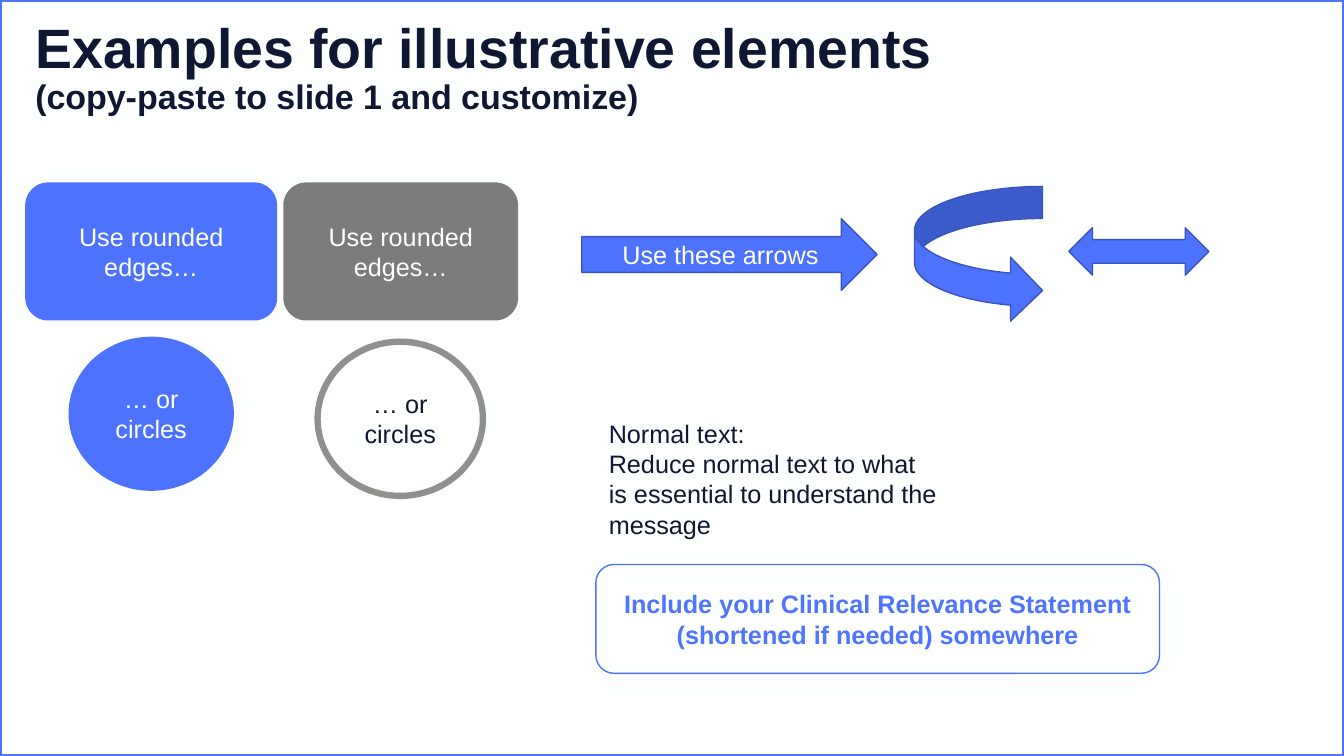
import dataclasses
import typing

import pptx
import pptx.dml.color
import pptx.enum.shapes
import pptx.enum.text
import pptx.util

SCALE = 9144
KIND = pptx.enum.shapes.MSO_SHAPE
ALIGN = pptx.enum.text.PP_ALIGN
ANCHOR = pptx.enum.text.MSO_ANCHOR
BLUE, EDGE, GRAY, RING = "4D73FE", "3955BC", "7C7C7C", "8E928E"
WHITE, NAVY, CLAIM = "FEFFFF", "0F1732", "4F74FE"


@dataclasses.dataclass
class Item:
    kind: typing.Any
    box: tuple[int, int, int, int]
    fill: str | None = None
    line: str | None = None
    width: float = 1
    text: tuple[str, ...] = ()
    ink: str = WHITE
    bold: bool = False
    align: typing.Any = ALIGN.CENTER
    anchor: typing.Any = ANCHOR.MIDDLE


ROUND = ("Use rounded edges…",)
CIRCLE = ("… or circles",)

ITEMS = [
    Item(KIND.RECTANGLE, (0, 0, 1333, 750), line=BLUE, width=3),
    Item(KIND.ROUNDED_RECTANGLE, (281, 181, 233, 137), GRAY, text=ROUND),
    Item(KIND.RIGHT_ARROW, (577, 217, 293, 71), BLUE, EDGE,
         text=("Use these arrows",)),
    Item(KIND.ROUNDED_RECTANGLE, (591, 560, 559, 108), WHITE, BLUE,
         text=("Include your Clinical Relevance Statement",
               "(shortened if needed) somewhere"),
         ink=CLAIM, bold=True),
    Item(KIND.RECTANGLE, (594, 410, 347, 131), WHITE,
         text=("Normal text:", "Reduce normal text to what is essential "
               "to understand the message"),
         ink=NAVY, align=ALIGN.LEFT, anchor=ANCHOR.TOP),
    Item(KIND.CURVED_RIGHT_ARROW, (907, 185, 127, 135), BLUE, EDGE),
    Item(KIND.LEFT_RIGHT_ARROW, (1060, 226, 139, 47), BLUE, EDGE),
    Item(KIND.OVAL, (68, 334, 164, 153), BLUE, text=CIRCLE),
    Item(KIND.OVAL, (315, 339, 164, 153), line=RING, width=4.5,
         text=CIRCLE, ink=NAVY),
    Item(KIND.ROUNDED_RECTANGLE, (25, 181, 250, 137), BLUE, text=ROUND),
]


def px(size: int) -> pptx.util.Emu:
    return pptx.util.Emu(size * SCALE)


def tint(part: typing.Any, code: str) -> None:
    part.rgb = pptx.dml.color.RGBColor.from_string(code)


def put(part: typing.Any, form: dict[str, typing.Any]) -> None:
    for name, value in form.items():
        setattr(part, name, value)


def style(font: typing.Any, size: float, ink: str, bold: bool) -> None:
    put(font, {"name": "Arial", "size": pptx.util.Pt(size), "bold": bold})
    tint(font.color, ink)


def paint(fill: typing.Any, code: str | None) -> None:
    if code is None:
        fill.background()
    else:
        fill.solid()
        tint(fill.fore_color, code)


def draw(slide: typing.Any, item: Item) -> None:
    shape = slide.shapes.add_shape(item.kind, *map(px, item.box))
    shape.shadow.inherit = False
    paint(shape.fill, item.fill)
    paint(shape.line.fill, item.line)
    if item.line:
        shape.line.width = pptx.util.Pt(item.width)
    if not item.text:
        return
    frame = shape.text_frame
    frame.text = "\n".join(item.text)
    put(frame, {"word_wrap": True, "vertical_anchor": item.anchor})
    for para in frame.paragraphs:
        para.alignment = item.align
        style(para.font, 18, item.ink, item.bold)


def head(slide: typing.Any) -> None:
    title = slide.shapes.title
    names = ("left", "top", "width", "height")
    put(title, dict(zip(names, map(px, (25, 18, 1014, 101)))))
    frame = title.text_frame
    put(frame, {"word_wrap": True, "vertical_anchor": ANCHOR.MIDDLE,
                "auto_size": pptx.enum.text.MSO_AUTO_SIZE.NONE})
    para = frame.paragraphs[0]
    put(para, {"alignment": ALIGN.LEFT, "line_spacing": 0.9})
    main = para.add_run()
    main.text = "Examples for illustrative elements"
    style(main.font, 39.6, NAVY, True)
    para.add_line_break()
    sub = para.add_run()
    sub.text = "(copy-paste to slide 1 and customize)"
    style(sub.font, 24.3, NAVY, True)


def main() -> None:
    deck = pptx.Presentation()
    put(deck, {"slide_width": px(1333), "slide_height": px(750)})
    slide = deck.slides.add_slide(deck.slide_layouts.get_by_name("Title Only"))
    paint(slide.background.fill, WHITE)
    head(slide)
    for item in ITEMS:
        draw(slide, item)
    deck.save("out.pptx")


if __name__ == "__main__":
    main()
